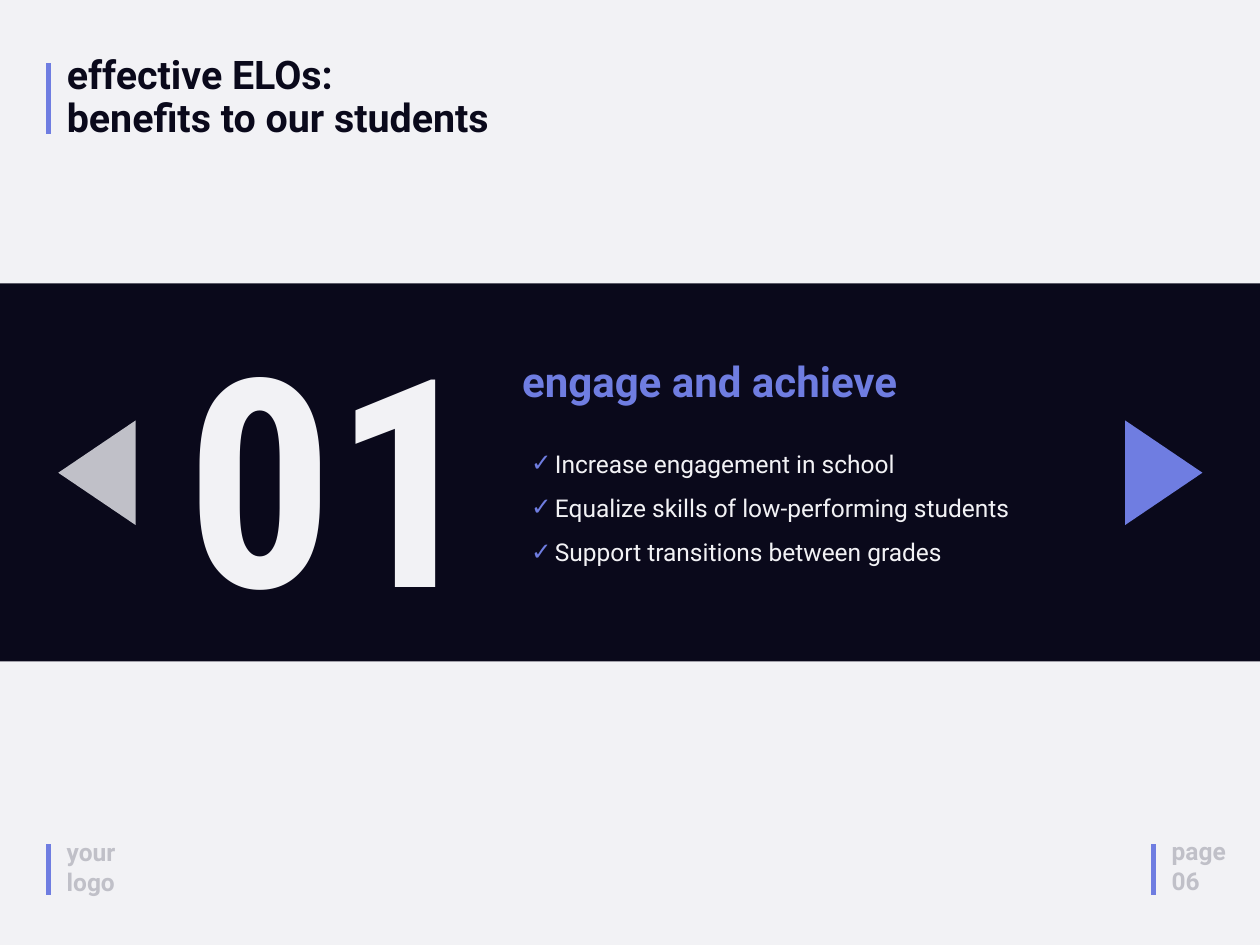
from lxml import etree
from pptx import Presentation
from pptx.dml.color import RGBColor
from pptx.enum import shapes, text
from pptx.oxml.ns import qn
from pptx.util import Cm, Pt

COLORS = {"paper": "F2F2F5", "night": "0A091B", "accent": "6F7DE1", "muted": "C0C0C8"}

# Content
TITLE = ["effective ELOs: \vbenefits to our students"]
BENEFITS = [
    "Increase engagement in school",
    "Equalize skills of low-performing students",
    "Support transitions between grades",
]
# lines, (left, top, width, height) in cm, format
LABELS = [
    (["your logo"], (2.44, 33.63, 3.02, 2.64), {"size": 28, "bold": True, "color": "muted"}),
    (["page", "06"], (46.99, 33.6, 4.83, 2.64), {"size": 28, "bold": True, "color": "muted"}),
    (["01"], (7.26, 11.81, 15.14, 14.5),
     {"size": 333, "bold": True, "color": "paper", "name": "Roboto Condensed"}),
    (["engage and achieve"], (20.8, 14.2, 23.85, 2.31),
     {"size": 48, "bold": True, "color": "accent"}),
]
# x, top, bottom in cm
BARS = [(1.96, 2.54, 5.41), (1.96, 34.04, 36.09), (46.51, 34.04, 36.09)]
# left in cm, rotation, color
ARROWS = [(44.81, 90, "accent"), (1.8, 270, "muted")]
BAND = (0, 11.43, 50.8, 15.24)


def rgb(name):
    return RGBColor.from_string(COLORS[name])


def place(box, frame):
    for side, length in zip(("left", "top", "width", "height"), frame):
        setattr(box, side, Cm(length))


def write(box, lines, style, spacing=1.0, anchor=text.MSO_ANCHOR.TOP):
    frame = box.text_frame
    settings = {"word_wrap": True, "auto_size": text.MSO_AUTO_SIZE.NONE,
                "vertical_anchor": anchor}
    for key, value in settings.items():
        setattr(frame, key, value)
    frame.text = "\n".join(lines)
    layout = {"alignment": text.PP_ALIGN.LEFT, "line_spacing": spacing,
              "space_before": Pt(0), "space_after": Pt(0)}
    letters = {"name": style.get("name", "Roboto"), "size": Pt(style["size"]),
               "bold": style.get("bold", False)}
    for para in frame.paragraphs:
        for key, value in layout.items():
            setattr(para, key, value)
        for span in para.runs:
            for key, value in letters.items():
                setattr(span.font, key, value)
            span.font.color.rgb = rgb(style["color"])


def add_check(para):
    props = para._p.get_or_add_pPr()
    props.set("marL", str(Cm(0.96)))
    props.set("indent", str(Cm(-0.96)))
    tint = etree.SubElement(props, qn("a:buClr"))
    etree.SubElement(tint, qn("a:srgbClr"), val=COLORS["accent"])
    etree.SubElement(props, qn("a:buChar"), char="✓")


def add_solid(page, kind, frame, color):
    shape = page.shapes.add_shape(kind, *map(Cm, frame))
    shape.shadow.inherit = False
    shape.fill.solid()
    shape.fill.fore_color.rgb = rgb(color)
    shape.line.fill.background()
    return shape


def main():
    deck = Presentation()
    deck.slide_width, deck.slide_height = Cm(50.8), Cm(38.1)
    page = deck.slides.add_slide(deck.slide_layouts[1])
    page.background.fill.solid()
    page.background.fill.fore_color.rgb = rgb("paper")
    title, body = page.placeholders

    # Accent bars
    for x, top, bottom in BARS:
        bar = page.shapes.add_connector(
            shapes.MSO_CONNECTOR.STRAIGHT, Cm(x), Cm(top), Cm(x), Cm(bottom))
        bar.line.color.rgb = rgb("accent")
        bar.line.width = Pt(5)
        etree.SubElement(bar.element.spPr, qn("a:effectLst"))

    # Dark band with its navigation arrows
    add_solid(page, shapes.MSO_SHAPE.RECTANGLE, BAND, "night")
    for left, rotation, color in ARROWS:
        arrow = add_solid(page, shapes.MSO_SHAPE.ISOSCELES_TRIANGLE,
                          (left, 17.5, 4.22, 3.12), color)
        arrow.rotation = rotation

    # Title
    place(title, (2.44, 2.11, 24.03, 3.71))
    write(title, TITLE, {"size": 45, "bold": True, "color": "night"}, 0.9,
          text.MSO_ANCHOR.MIDDLE)

    # Labels, number and heading
    for lines, frame, style in LABELS:
        write(page.shapes.add_textbox(*map(Cm, frame)), lines, style)

    # Benefits list, brought in front of the band
    body.element.getparent().append(body.element)
    place(body, (21.16, 17.37, 21.39, 5.64))
    write(body, BENEFITS, {"size": 28, "color": "paper"}, 1.5)
    for para in body.text_frame.paragraphs:
        add_check(para)

    deck.save("out.pptx")


if __name__ == "__main__":
    main()
